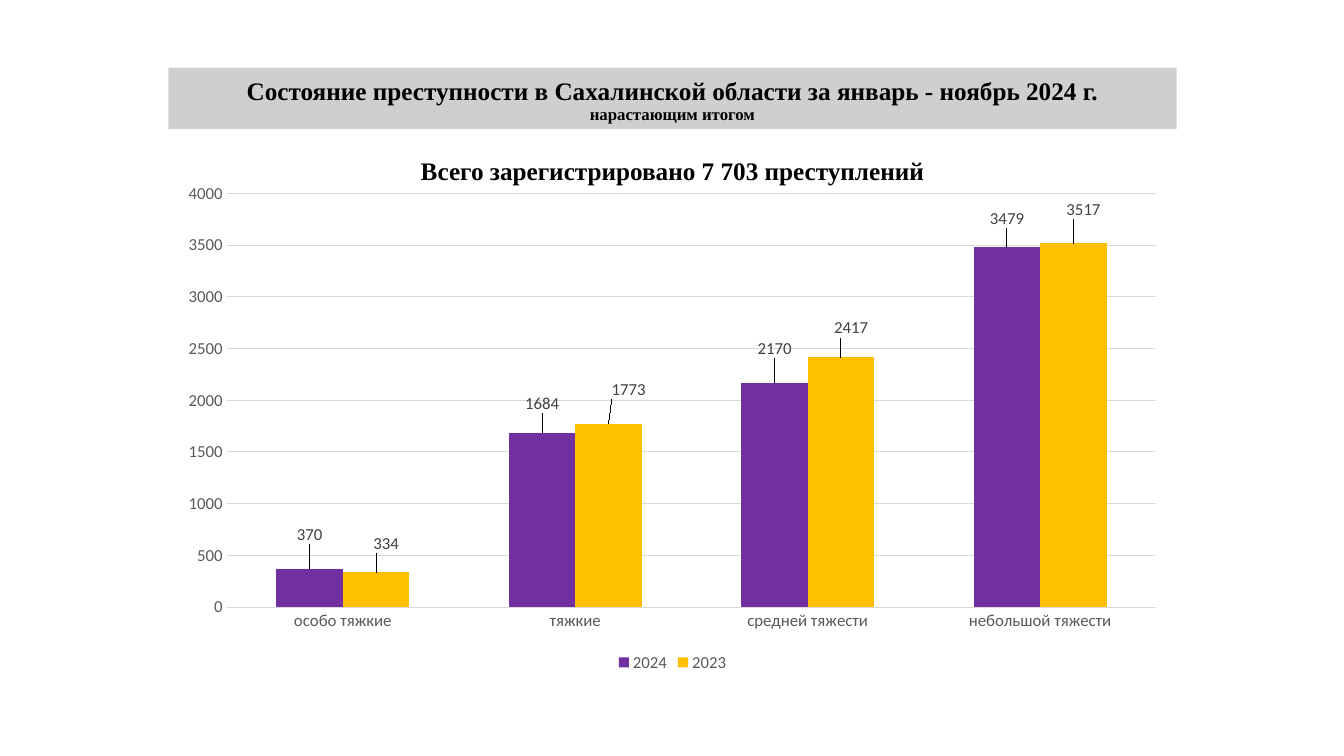
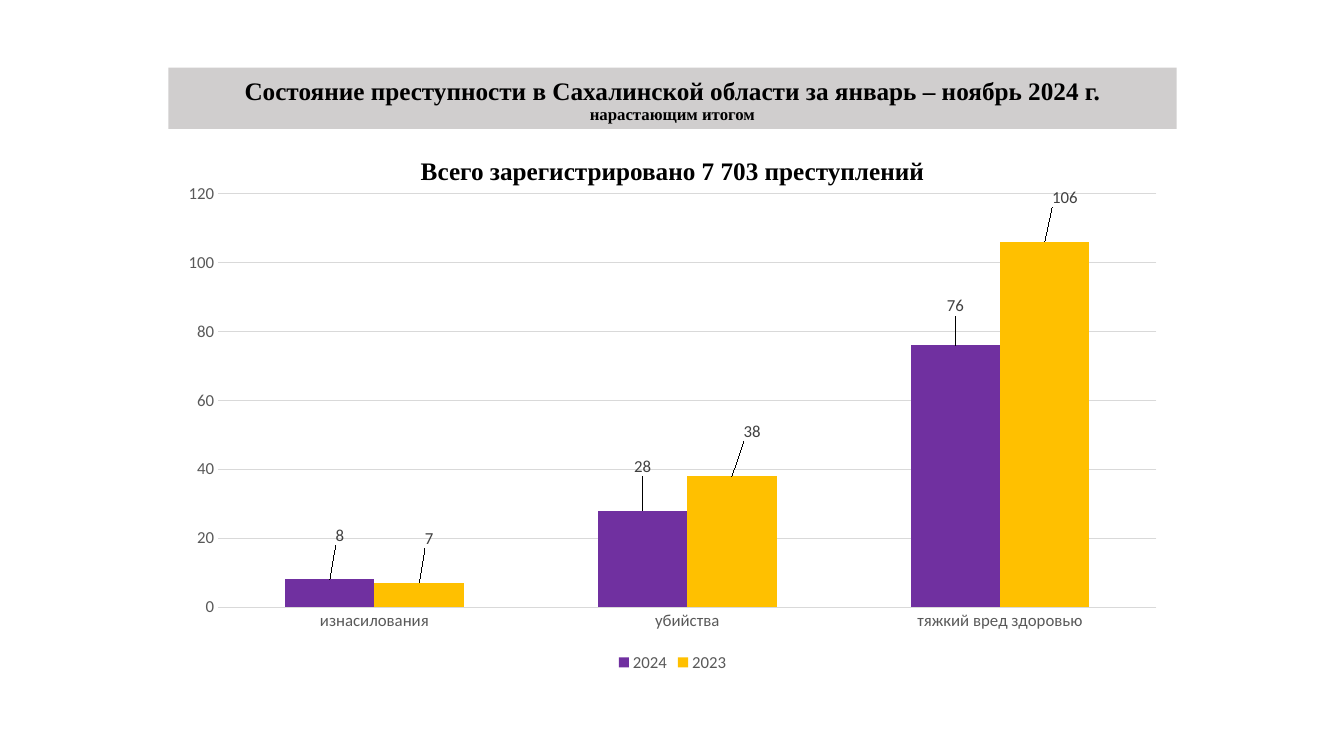
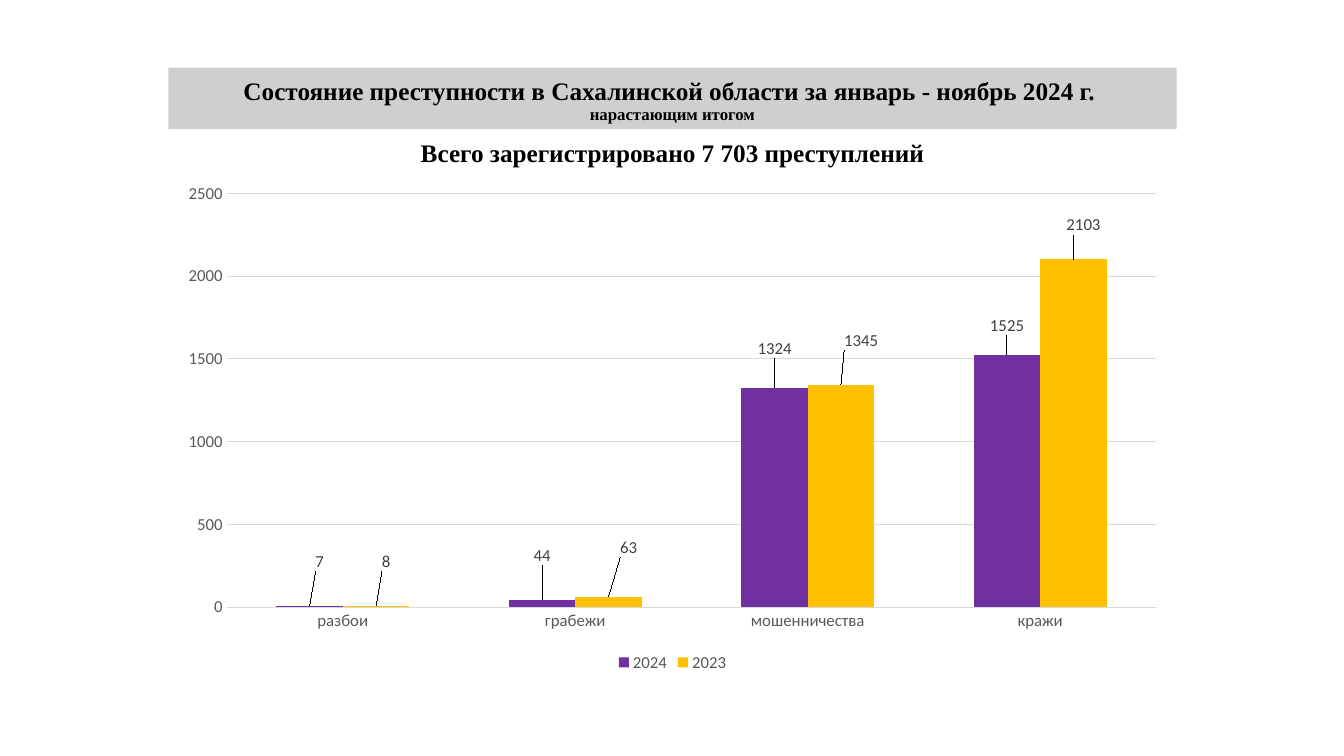
from lxml.etree import fromstring
from pptx import Presentation
from pptx.chart.data import CategoryChartData
from pptx.dml.color import RGBColor
from pptx.enum.chart import XL_CHART_TYPE as ChartType
from pptx.enum.chart import XL_LABEL_POSITION as LabelPosition
from pptx.enum.chart import XL_LEGEND_POSITION as LegendPosition
from pptx.enum.chart import XL_TICK_MARK as TickMark
from pptx.enum.shapes import MSO_SHAPE as Shape
from pptx.enum.text import MSO_ANCHOR as Anchor
from pptx.enum.text import PP_ALIGN as Align
from pptx.util import Inches, Pt

BLACK, BAND_GREY, GRID_GREY = "000000", "D0CECE", "D9D9D9"
AXIS_GREY, LABEL_GREY = "595959", "404040"
YEAR_COLORS = {"2024": "7030A0", "2023": "FFC000"}
HEADING_FONT, CHART_FONT = "Times New Roman", "Calibri"
LEFT, WIDTH = 1.67, 10
BAND_BOX = (LEFT, 0.67, WIDTH, 0.61)
CHART_BOX = (LEFT, 1.72, WIDTH, 4.99)
TOTAL_HEIGHT = 0.36
CHART_NS = "http://schemas.openxmlformats.org/drawingml/2006/chart"

SLIDES = [
    {
        "title": "Состояние преступности в Сахалинской области за январь - ноябрь 2024 г.",
        "total_top": 1.55,
        "categories": ["особо тяжкие", "тяжкие", "средней тяжести", "небольшой тяжести"],
        "2024": [370, 1684, 2170, 3479],
        "2023": [334, 1773, 2417, 3517],
        "shifts": {
            "2024": [(0, -0.04), (0, -0.03), (0, -0.04), (0, -0.03)],
            "2023": [(0.01, -0.03), (0.02, -0.04), (0.01, -0.03), (0.01, -0.04)],
        },
    },
    {
        "title": "Состояние преступности в Сахалинской области за январь – ноябрь 2024 г.",
        "total_top": 1.55,
        "categories": ["изнасилования", "убийства", "тяжкий вред здоровью"],
        "2024": [8, 28, 76],
        "2023": [7, 38, 106],
        "shifts": {
            "2024": [(0.01, -0.06), (0, -0.06), (0, -0.05)],
            "2023": [(0.01, -0.06), (0.02, -0.06), (0.02, -0.06)],
        },
    },
    {
        "title": "Состояние преступности в Сахалинской области за январь - ноябрь 2024 г. ",
        "total_top": 1.37,
        "categories": ["разбои", "грабежи", "мошенничества", "кражи"],
        "2024": [7, 44, 1324, 1525],
        "2023": [8, 63, 1345, 2103],
        "shifts": {
            "2024": [(0.01, -0.06), (0, -0.06), (0, -0.05), (0, -0.03)],
            "2023": [(0.01, -0.06), (0.02, -0.07), (0.02, -0.06), (0.01, -0.04)],
        },
    },
]


def color(hex_value):
    return RGBColor.from_string(hex_value)


def inches(box):
    return [Inches(length) for length in box]


def style_font(font, size, hex_value, name=CHART_FONT, bold=False):
    font.size, font.name, font.bold = Pt(size), name, bold
    font.color.rgb = color(hex_value)


def add_heading_run(paragraph, text, size):
    run = paragraph.add_run()
    run.text = text
    style_font(run.font, size, BLACK, HEADING_FONT, True)


def add_title_band(slide, box, title):
    band = slide.shapes.add_shape(Shape.RECTANGLE, *inches(box))
    band.shadow.inherit = False
    band.fill.solid()
    band.fill.fore_color.rgb = color(BAND_GREY)
    band.line.fill.background()
    band.text_frame.word_wrap = True
    band.text_frame.vertical_anchor = Anchor.BOTTOM
    heading = band.text_frame.paragraphs[0]
    heading.alignment, heading.line_spacing = Align.CENTER, 0.9
    add_heading_run(heading, title, 18)
    heading.add_line_break()
    add_heading_run(heading, "нарастающим итогом", 12)


def add_total(slide, box):
    frame = slide.shapes.add_textbox(*inches(box)).text_frame
    frame.word_wrap = True
    total = frame.paragraphs[0]
    total.alignment, total.line_spacing = Align.CENTER, 0.8
    total.space_before = Pt(10)
    add_heading_run(total, "Всего зарегистрировано 7 703 преступлений", 18)


def style_axis(axis):
    axis.major_tick_mark = axis.minor_tick_mark = TickMark.NONE
    axis.format.line.fill.background()
    style_font(axis.tick_labels.font, 12, AXIS_GREY)


def shift_label(label_xml, x, y):
    label_xml.insert(1, fromstring(
        f'<c:layout xmlns:c="{CHART_NS}"><c:manualLayout>'
        f'<c:x val="{x}"/><c:y val="{y}"/></c:manualLayout></c:layout>'))


def style_year(year, shifts):
    year.format.fill.solid()
    year.format.fill.fore_color.rgb = color(YEAR_COLORS[year.name])
    year.invert_if_negative = False
    labels = year.data_labels
    labels.show_value, labels.position = True, LabelPosition.OUTSIDE_END
    style_font(labels.font, 12, LABEL_GREY)
    for index in range(len(shifts)):
        label = year.points[index].data_label
        style_font(label.font, 12, LABEL_GREY)
        label.position = LabelPosition.OUTSIDE_END
    for label_xml, shift in zip(labels._element.xpath("c:dLbl"), shifts):
        shift_label(label_xml, *shift)


def add_crime_chart(slide, box, content):
    data = CategoryChartData()
    data.categories = content["categories"]
    for name in YEAR_COLORS:
        data.add_series(name, content[name])
    chart = slide.shapes.add_chart(
        ChartType.COLUMN_CLUSTERED, *inches(box), data).chart
    chart.has_title = False
    style_font(chart.font, 10, BLACK)
    style_axis(chart.category_axis)
    style_axis(chart.value_axis)
    grid = chart.value_axis.major_gridlines.format.line
    grid.color.rgb, grid.width = color(GRID_GREY), Pt(0.75)
    chart.has_legend = True
    chart.legend.position = LegendPosition.BOTTOM
    chart.legend.include_in_layout = False
    style_font(chart.legend.font, 12, AXIS_GREY)
    columns = chart.plots[0]
    columns.gap_width, columns.overlap, columns.vary_by_categories = 150, 0, False
    for year in columns.series:
        style_year(year, content["shifts"][year.name])


def add_crime_slide(deck, content):
    slide = deck.slides.add_slide(deck.slide_layouts[6])
    add_title_band(slide, BAND_BOX, content["title"])
    add_total(slide, (LEFT, content["total_top"], WIDTH, TOTAL_HEIGHT))
    add_crime_chart(slide, CHART_BOX, content)


def main():
    deck = Presentation()
    deck.slide_width, deck.slide_height = Inches(13.33), Inches(7.5)
    for content in SLIDES:
        add_crime_slide(deck, content)
    deck.save("out.pptx")


if __name__ == "__main__":
    main()
